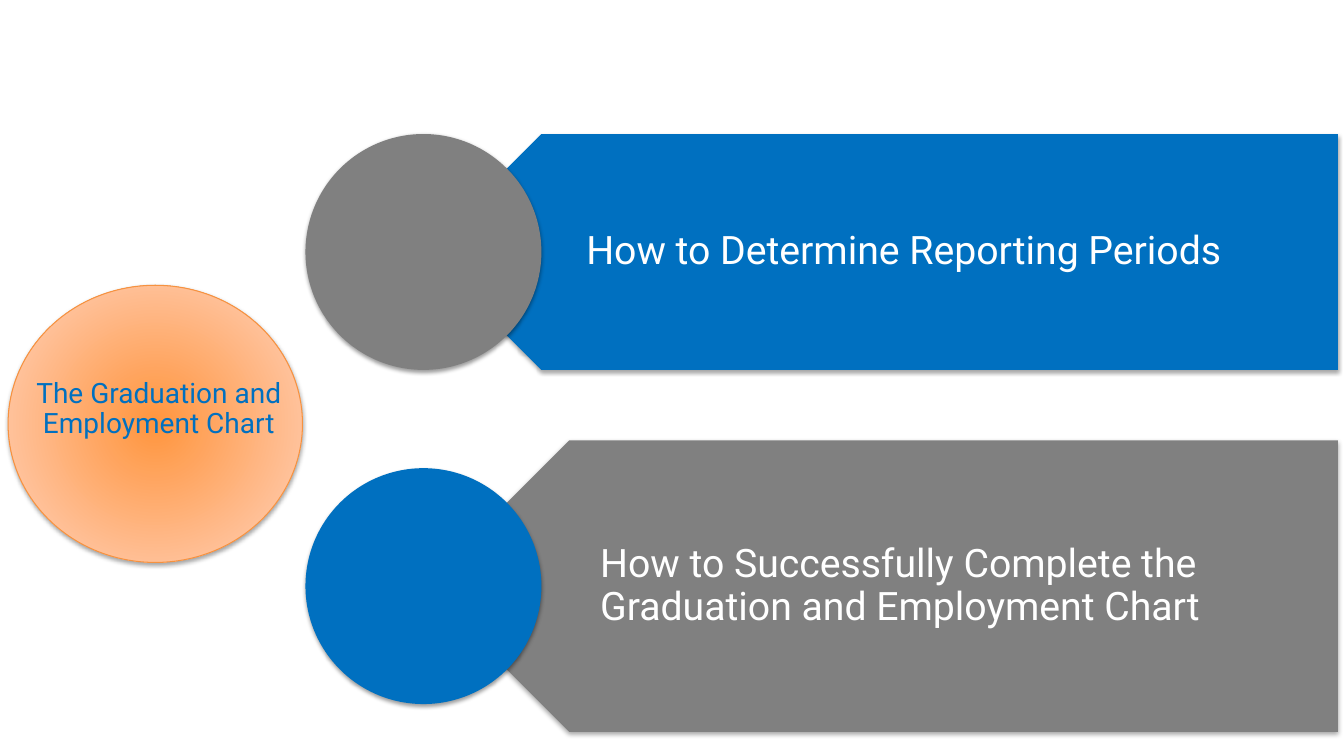
"""Build a slide with one topic circle and two labelled arrow bars."""
from lxml import etree
from pptx import Presentation
from pptx.dml.color import RGBColor
from pptx.enum.shapes import MSO_SHAPE
from pptx.enum.text import MSO_ANCHOR, PP_ALIGN
from pptx.oxml import parse_xml
from pptx.oxml.ns import nsdecls, qn
from pptx.util import Inches, Pt

HUES = {"blue": "0070C0", "gray": "808080", "white": "FFFFFF",
        "core": "FF953E", "rim": "FFD2BD", "edge": "F69240"}


def add_form(kind, left, top, width, height, hue, dist=1.8, alpha=35):
    form = slide.shapes.add_shape(kind, Inches(left), Inches(top), Inches(width), Inches(height))
    form.fill.solid()
    form.fill.fore_color.rgb = RGBColor.from_string(HUES[hue])
    form.line.fill.background()
    form.shadow.inherit = False
    form._element.spPr.find(qn("a:effectLst")).append(parse_xml(
        f'<a:outerShdw {nsdecls("a")} blurRad="{Pt(3.1)}" dist="{Pt(dist)}" dir="5400000" '
        f'rotWithShape="0"><a:srgbClr val="000000"><a:alpha val="{alpha * 1000}"/>'
        '</a:srgbClr></a:outerShdw>'))
    return form


def add_label(text, left, top, width, height, size, hue):
    box = slide.shapes.add_textbox(Inches(left), Inches(top), Inches(width), Inches(height))
    frame = box.text_frame
    frame.word_wrap = True
    frame.text = text
    para = frame.paragraphs[0]
    para.line_spacing = 0.9
    font = para.runs[0].font
    font.name = "Roboto"
    font.size = Pt(size)
    font.color.rgb = RGBColor.from_string(HUES[hue])
    return frame


deck = Presentation()
deck.slide_width = Inches(13.33)
deck.slide_height = Inches(7.5)
slide = deck.slides.add_slide(deck.slide_layouts[6])

LEFT, RIGHT, DISC = 4.2, 13.27, 2.34
BARS = [
    ("How to Determine Reporting Periods", 1.33, 2.34, "blue", "gray"),
    ("How to Successfully Complete the Graduation and Employment Chart",
     4.37, 2.89, "gray", "blue"),
]
for text, top, height, hue, dot in BARS:
    bar = add_form(MSO_SHAPE.PENTAGON, LEFT, top, RIGHT - LEFT, height, hue)
    bar.rotation = 180
    start = LEFT + height / 4
    frame = add_label(text, start, top, RIGHT - start, height, 28, "white")
    frame.vertical_anchor = MSO_ANCHOR.MIDDLE
    frame.margin_left = Inches(1.03)
    frame.margin_right = Inches(0.22)
    frame.margin_top = frame.margin_bottom = Inches(0.12)
    add_form(MSO_SHAPE.OVAL, LEFT - DISC / 2, top + (height - DISC) / 2,
             DISC, DISC, dot, 1.6, 38)

topic = add_form(MSO_SHAPE.OVAL, 0.08, 2.83, 2.92, 2.75, "core")
topic.line.color.rgb = RGBColor.from_string(HUES["edge"])
topic.line.width = Pt(0.75)
topic.fill.gradient()
for stop, hue in zip(topic.fill.gradient_stops, ("core", "rim")):
    stop.color.rgb = RGBColor.from_string(HUES[hue])
blend = topic._element.spPr.find(qn("a:gradFill"))
blend.remove(blend.find(qn("a:lin")))
ring = etree.SubElement(blend, qn("a:path"), {"path": "circle"})
etree.SubElement(ring, qn("a:fillToRect"), dict.fromkeys("ltrb", "50000"))

label = add_label("The Graduation and Employment Chart", 0, 3.71, 3.15, 0.7, 20, "blue")
label.paragraphs[0].alignment = PP_ALIGN.CENTER

deck.save("out.pptx")
